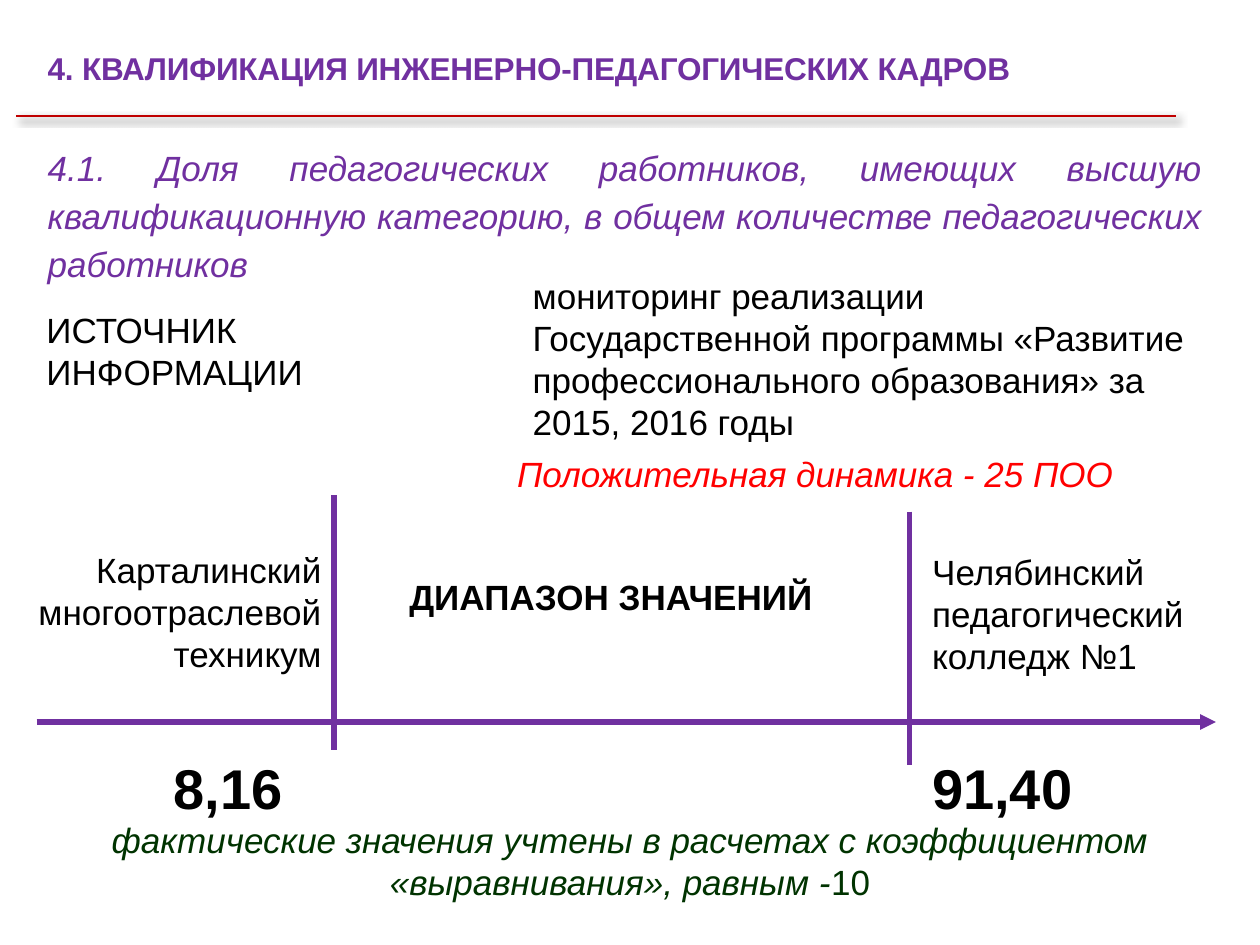
import pptx
import pptx.util
import lxml.etree
from pptx.dml.color import RGBColor
from pptx.enum.shapes import MSO_CONNECTOR, MSO_SHAPE
from pptx.enum.text import MSO_ANCHOR, PP_ALIGN
from pptx.oxml import parse_xml
from pptx.oxml.ns import nsdecls, qn
from pptx.util import Inches, Pt

PURPLE = RGBColor(0x70, 0x30, 0xA0)
DARK_RED = RGBColor(0xC0, 0x00, 0x00)
RED = RGBColor(0xFF, 0x00, 0x00)
DARK_GREEN = RGBColor(0x00, 0x33, 0x00)
BLACK = RGBColor(0x00, 0x00, 0x00)
WHITE = RGBColor(0xFF, 0xFF, 0xFF)

presentation = pptx.Presentation()
presentation.slide_width = Inches(10)
presentation.slide_height = Inches(7.5)
slide = presentation.slides.add_slide(presentation.slide_layouts[6])


def write(shape, text, size=20, color=BLACK, bold=False, italic=False,
          align=PP_ALIGN.LEFT, wrap=True):
    frame = shape.text_frame
    frame.word_wrap = wrap
    frame.vertical_anchor = MSO_ANCHOR.TOP
    paragraph = frame.paragraphs[0]
    paragraph.alignment = align
    paragraph.add_run().text = text
    font = paragraph.font
    font.name = "Arial"
    font.size = Pt(size)
    font.color.rgb = color
    font.bold = bold
    font.italic = italic
    return paragraph


def add_line(start_x, start_y, end_x, end_y, color, width):
    """Draw a straight connector and return it with its empty effect list."""
    line = slide.shapes.add_connector(
        MSO_CONNECTOR.STRAIGHT,
        Inches(start_x), Inches(start_y), Inches(end_x), Inches(end_y))
    line.line.color.rgb = color
    line.line.width = Pt(width)
    properties = line._element.spPr
    effects = lxml.etree.SubElement(properties, qn("a:effectLst"))
    return line, effects


# Heading rule with a soft shadow
rule, rule_effects = add_line(0.13, 0.92, 9.33, 0.92, DARK_RED, 1.5)
rule_effects.append(parse_xml(
    f'<a:outerShdw {nsdecls("a")} blurRad="{Pt(4)}" dist="{Pt(3)}" '
    'dir="2700000" algn="tl" rotWithShape="0">'
    '<a:srgbClr val="000000"><a:alpha val="40000"/></a:srgbClr></a:outerShdw>'))

# Value axis with its two limits
add_line(2.65, 3.93, 2.65, 5.95, PURPLE, 3)
add_line(7.22, 4.06, 7.22, 6.07, PURPLE, 3)
axis, axis_effects = add_line(0.29, 5.73, 9.65, 5.73, PURPLE, 3)
lxml.etree.SubElement(axis.line._get_or_add_ln(), qn("a:tailEnd"), type="triangle")

# Texts: left, top, width, height, wording, format
texts = [
    (0.28, 1.06, 9.36, 1.26,
     "4.1. Доля педагогических работников, имеющих высшую квалификационную "
     "категорию, в общем количестве педагогических работников",
     dict(color=PURPLE, italic=True, align=PP_ALIGN.JUSTIFY)),
    (4.13, 2.13, 5.5, 1.45,
     "мониторинг реализации Государственной программы «Развитие "
     "профессионального образования» за 2015, 2016 годы", {}),
    (0.27, 2.4, 2.49, 0.77, "ИСТОЧНИК ИНФОРМАЦИИ", {}),
    (0.16, 4.3, 2.49, 1.11, "Карталинский многоотраслевой техникум",
     dict(align=PP_ALIGN.RIGHT)),
    (7.3, 4.32, 2.42, 1.11, "Челябинский педагогический колледж №1", {}),
    (1.28, 5.93, 1.07, 0.64, "8,16", dict(size=32, bold=True, wrap=False)),
    (7.3, 5.93, 1.32, 0.64, "91,40", dict(size=32, bold=True, wrap=False)),
    (3.15, 4.52, 6.22, 0.44, "ДИАПАЗОН ЗНАЧЕНИЙ", dict(bold=True)),
    (0, 6.45, 10, 0.77,
     "фактические значения учтены в расчетах с коэффициентом "
     "«выравнивания», равным -",
     dict(color=DARK_GREEN, italic=True, align=PP_ALIGN.CENTER)),
]
paragraphs = []
for left, top, width, height, wording, style in texts:
    box = slide.shapes.add_textbox(
        Inches(left), Inches(top), Inches(width), Inches(height))
    paragraphs.append(write(box, wording, **style))

paragraphs[0].line_spacing = 1.15
coefficient = paragraphs[-1].add_run()
coefficient.text = "10"
coefficient.font.italic = False

title = slide.shapes.add_textbox(Inches(0.28), Inches(0.34), Inches(8.98), Inches(0.4))
title_paragraph = write(title, "4. КВАЛИФИКАЦИЯ ИНЖЕНЕРНО-ПЕДАГОГИЧЕСКИХ КАДРОВ",
                        size=18, color=PURPLE, bold=True)
title_paragraph.runs[0].font._element.set("spc", "-10")

# Trend note on a white plate
trend = slide.shapes.add_shape(
    MSO_SHAPE.RECTANGLE, Inches(3.71), Inches(3.54), Inches(5.6), Inches(0.44))
trend.shadow.inherit = False
trend.fill.solid()
trend.fill.fore_color.rgb = WHITE
trend.line.fill.background()
write(trend, "Положительная динамика - 25 ПОО ", color=RED, italic=True,
      align=PP_ALIGN.CENTER)

presentation.save("out.pptx")
